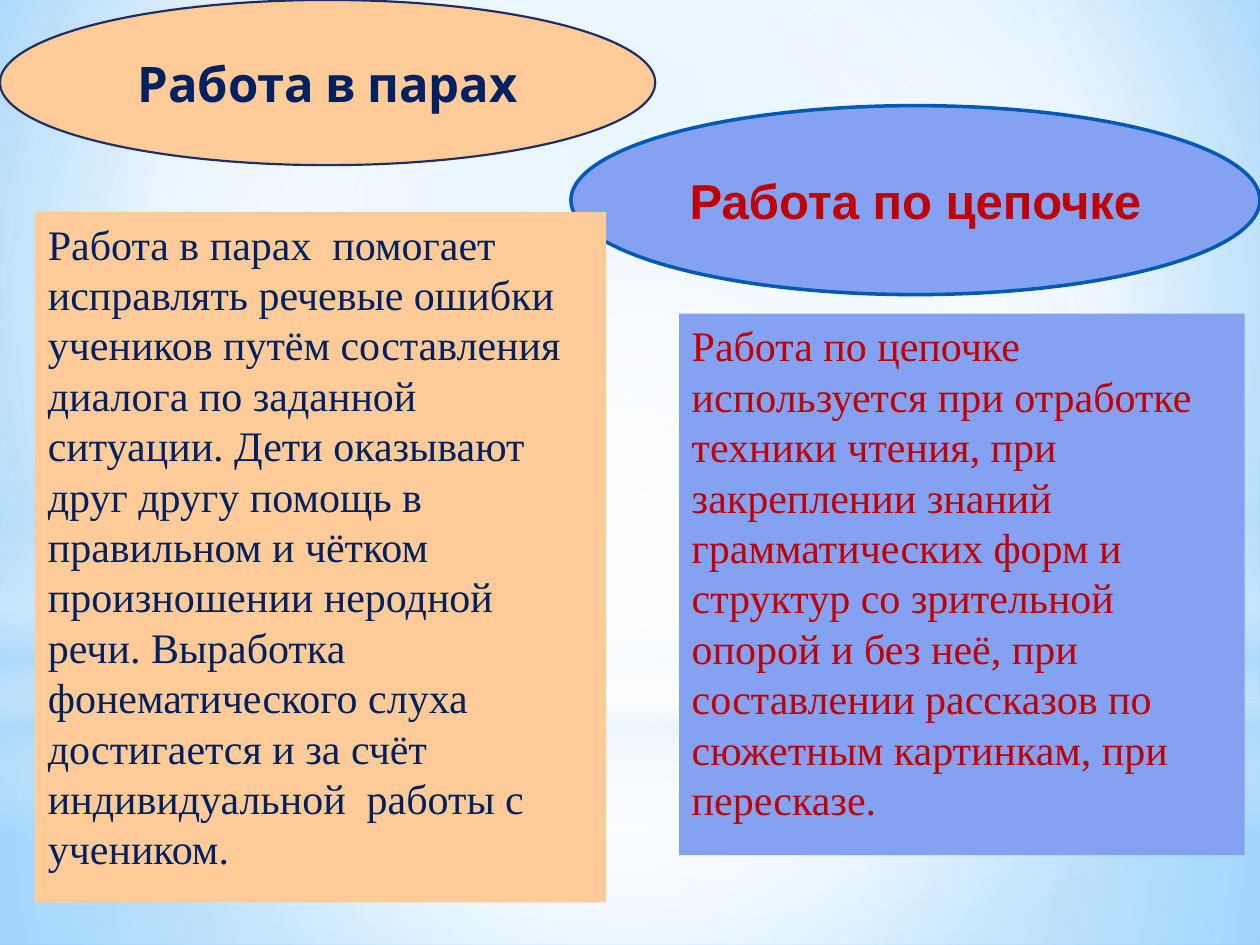
from lxml.etree import SubElement
from pptx import Presentation
from pptx.dml.color import RGBColor
from pptx.enum.shapes import MSO_SHAPE
from pptx.enum.text import MSO_ANCHOR, MSO_AUTO_SIZE, PP_ALIGN
from pptx.oxml.ns import qn
from pptx.util import Cm, Pt

COLORS = {
    "white": "FFFFFF", "mist": "B4DCFA", "sky": "9ED5FF", "azure": "5BB9FF",
    "peach": "FFCC99", "navy": "002060", "ink": "1F2E69",
    "periwinkle": "84A1F2", "red": "C00000", "blue": "0059B2",
}
PAGE_WIDTH, PAGE_HEIGHT = 25.4, 19.05
HORIZON = 14.17
CENTER = (50, 50, 50, 50)

PAIRS_TEXT = (
    "Работа в парах  помогает исправлять речевые ошибки учеников путём "
    "составления диалога по заданной ситуации. Дети оказывают друг другу "
    "помощь в правильном и чётком произношении неродной речи. Выработка "
    "фонематического слуха достигается и за счёт индивидуальной  работы с "
    "учеником."
)
CHAIN_TEXT = (
    "Работа по цепочке используется при отработке техники чтения, при "
    "закреплении знаний грамматических форм и структур со зрительной опорой "
    "и без неё, при составлении рассказов по сюжетным картинкам, при пересказе."
)


def color(name):
    return RGBColor.from_string(COLORS[name])


def set_gradient(properties, stops, focus=None):
    """Swap a solid fill for a gradient: radial around focus, else vertical."""
    solid = properties.find(qn("a:solidFill"))
    gradient = properties.makeelement(qn("a:gradFill"), {"rotWithShape": "1"})
    properties.replace(solid, gradient)
    stop_list = SubElement(gradient, qn("a:gsLst"))
    for position, name, opacity in stops:
        stop = SubElement(stop_list, qn("a:gs"), pos=str(position * 1000))
        tint = SubElement(stop, qn("a:srgbClr"), val=COLORS[name])
        if opacity < 100:
            SubElement(tint, qn("a:alpha"), val=str(opacity * 1000))
    if focus:
        route = SubElement(gradient, qn("a:path"), path="circle")
        edges = {side: str(part * 1000) for side, part in zip("ltrb", focus)}
        SubElement(route, qn("a:fillToRect"), **edges)
    else:
        SubElement(gradient, qn("a:lin"), ang="5400000", scaled="0")


def place(shape, box):
    shape.left, shape.top, shape.width, shape.height = (Cm(n) for n in box)


def add_plain_shape(page, kind, box, fill):
    shape = page.shapes.add_shape(kind, *(Cm(n) for n in box))
    shape.shadow.inherit = False
    shape.fill.solid()
    shape.fill.fore_color.rgb = color(fill)
    shape.line.fill.background()
    return shape


def format_span(span, font, size, name):
    span.font.name = font
    span.font.size = Pt(size)
    span.font.color.rgb = color(name)


def draw_backdrop(page):
    page.background.fill.solid()
    set_gradient(page.element.find(".//" + qn("p:bgPr")),
                 [(0, "sky", 100), (60, "white", 100), (100, "azure", 100)],
                 (20, 10, 20, 60))
    layers = [
        # Floor
        (MSO_SHAPE.RECTANGLE, HORIZON, PAGE_HEIGHT - HORIZON, CENTER,
         [(0, "white", 91), (37, "white", 76), (100, "mist", 79)]),
        # Wall
        (MSO_SHAPE.RECTANGLE, 0, HORIZON, CENTER,
         [(0, "white", 89), (48, "white", 62), (100, "mist", 79)]),
        # Band along the horizon
        (MSO_SHAPE.RECTANGLE, 10.46, 6.35, None,
         [(0, "white", 0), (29, "white", 30), (45, "mist", 40),
          (55, "white", 26), (65, "mist", 60), (100, "white", 0)]),
        # Central glow
        (MSO_SHAPE.OVAL, 4.45, HORIZON, CENTER,
         [(0, "white", 100), (56, "white", 0)]),
    ]
    for kind, top, height, focus, stops in layers:
        layer = add_plain_shape(page, kind, (0, top, PAGE_WIDTH, height), "white")
        set_gradient(layer.element.spPr, stops, focus)


def draw_heading(page, box, text, font, fill, outline, width, ink):
    oval = add_plain_shape(page, MSO_SHAPE.OVAL, box, fill)
    oval.line.color.rgb = color(outline)
    oval.line.width = Pt(width)
    frame = oval.text_frame
    frame.text = text
    frame.word_wrap = True
    frame.vertical_anchor = MSO_ANCHOR.MIDDLE
    para = frame.paragraphs[0]
    para.alignment = PP_ALIGN.CENTER
    format_span(para.runs[0], font, 28, ink)
    para.runs[0].font.bold = True


def draw_body(body, box, text, fill, ink):
    place(body, box)
    body.fill.solid()
    body.fill.fore_color.rgb = color(fill)
    frame = body.text_frame
    frame.text = text
    frame.word_wrap = True
    frame.auto_size = MSO_AUTO_SIZE.NONE
    frame.vertical_anchor = MSO_ANCHOR.TOP
    para = frame.paragraphs[0]
    format_span(para.runs[0], "Times New Roman", 24, ink)
    # No bullet, no hanging indent
    settings = para._p.get_or_add_pPr()
    settings.set("marL", "0")
    settings.set("indent", "0")
    SubElement(settings, qn("a:buNone"))
    # Bring the text in front of the ovals
    body.element.getparent().append(body.element)


def main():
    deck = Presentation()
    deck.slide_width, deck.slide_height = Cm(PAGE_WIDTH), Cm(PAGE_HEIGHT)
    page = deck.slides.add_slide(deck.slide_layouts[3])
    title, pairs_body, chain_body = list(page.placeholders)[:3]
    title.element.getparent().remove(title.element)

    draw_backdrop(page)
    draw_heading(page, (0, 0, 13.21, 3.33), "Работа в парах", "Cabin",
                 "peach", "ink", 1.25, "navy")
    draw_heading(page, (11.51, 2.13, 13.89, 3.81), "Работа по цепочке", "Arial",
                 "periwinkle", "blue", 2, "red")
    draw_body(pairs_body, (0.71, 4.27, 11.51, 13.92), PAIRS_TEXT, "peach", "navy")
    draw_body(chain_body, (13.69, 6.32, 11.4, 10.92), CHAIN_TEXT,
              "periwinkle", "red")
    deck.save("out.pptx")


if __name__ == "__main__":
    main()
